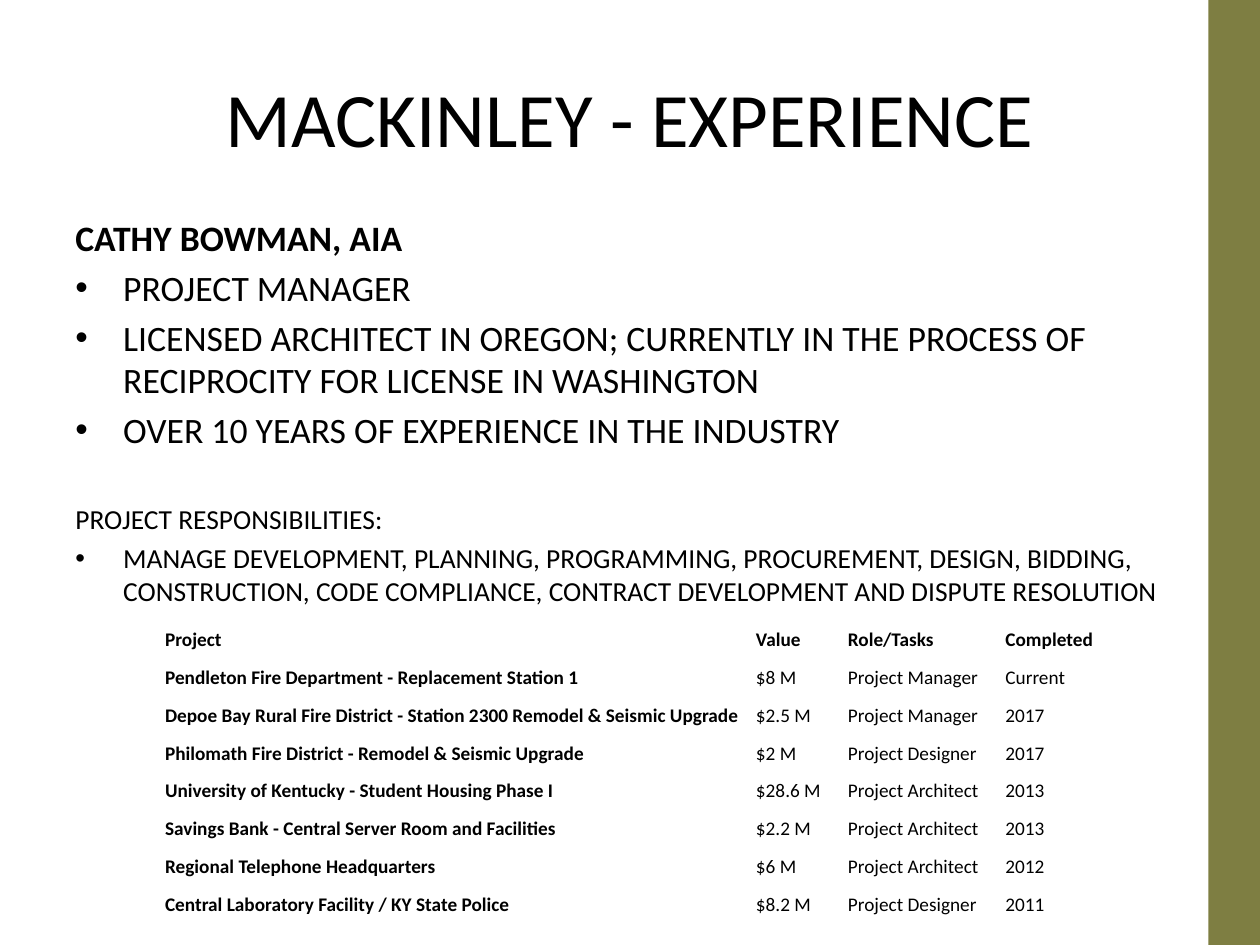
"""Build the project manager experience slide with its project table."""
from dataclasses import dataclass

from lxml.etree import SubElement
from pptx import Presentation
from pptx.dml.color import RGBColor
from pptx.enum.shapes import MSO_SHAPE
from pptx.enum.text import MSO_ANCHOR, PP_ALIGN
from pptx.oxml.ns import qn
from pptx.util import Inches, Pt


@dataclass(frozen=True)
class Theme:
    font: str = "Calibri"
    ink: RGBColor = RGBColor(0, 0, 0)
    paper: RGBColor = RGBColor(255, 255, 255)
    olive: RGBColor = RGBColor(0x7E, 0x7E, 0x42)
    title: float = 44
    profile: float = 20.4
    duties: float = 15.7
    table: float = 11


THEME = Theme()
WIDTH, HEIGHT = 10, 7.5
MARGIN = WIDTH * 0.05
BAR_LEFT = 9.59
INDENT = 0.38
LEADING_SHARE = 0.2
SECTION_GAP = 29.4
TITLE = "MACKINLEY - EXPERIENCE"
PROFILE = [
    ("CATHY BOWMAN, AIA", dict(size=THEME.profile, bold=True, before=0)),
    ("PROJECT MANAGER", dict(size=THEME.profile, bullet=True)),
    ("LICENSED ARCHITECT IN OREGON; CURRENTLY IN THE PROCESS OF "
     "RECIPROCITY FOR LICENSE IN WASHINGTON", dict(size=THEME.profile, bullet=True)),
    ("OVER 10 YEARS OF EXPERIENCE IN THE INDUSTRY", dict(size=THEME.profile, bullet=True)),
    ("PROJECT RESPONSIBILITIES:", dict(size=THEME.duties, before=SECTION_GAP)),
    ("MANAGE DEVELOPMENT, PLANNING, PROGRAMMING, PROCUREMENT, DESIGN, BIDDING, "
     "CONSTRUCTION, CODE COMPLIANCE, CONTRACT DEVELOPMENT AND DISPUTE RESOLUTION",
     dict(size=THEME.duties, bullet=True)),
]
PROJECTS = [
    ("Project", "Value", "Role/Tasks", "Completed"),
    ("Pendleton Fire Department - Replacement Station 1", "$8 M", "Project Manager", "Current"),
    ("Depoe Bay Rural Fire District - Station 2300 Remodel & Seismic Upgrade",
     "$2.5 M", "Project Manager", "2017"),
    ("Philomath Fire District - Remodel & Seismic Upgrade", "$2 M", "Project Designer", "2017"),
    ("University of Kentucky - Student Housing Phase I", "$28.6 M", "Project Architect", "2013"),
    ("Savings Bank - Central Server Room and Facilities", "$2.2 M", "Project Architect", "2013"),
    ("Regional Telephone Headquarters", "$6 M", "Project Architect", "2012"),
    ("Central Laboratory Facility / KY State Police", "$8.2 M", "Project Designer", "2011"),
]
COLUMNS = (4.69, 0.73, 1.25, 0.83)
ROW = 0.3
TABLE_TOP = 4.93


def write(paragraph, text, size, bold=False, bullet=False, before=None, align=PP_ALIGN.LEFT):
    if bullet:
        properties = paragraph._p.get_or_add_pPr()
        properties.set("marL", str(Inches(INDENT)))
        properties.set("indent", str(-Inches(INDENT)))
        SubElement(properties, qn("a:buFont"), typeface="Arial")
        SubElement(properties, qn("a:buChar"), char="•")
    paragraph.alignment = align
    paragraph.space_before = Pt(size * LEADING_SHARE if before is None else before)
    run = paragraph.add_run()
    run.text = text
    run.font.name, run.font.size, run.font.bold = THEME.font, Pt(size), bold
    run.font.color.rgb = THEME.ink


def add_frame(slide, top, height, anchor):
    box = slide.shapes.add_textbox(
        Inches(MARGIN), Inches(top), Inches(WIDTH - 2 * MARGIN), Inches(height))
    box.text_frame.word_wrap = True
    box.text_frame.vertical_anchor = anchor
    return box.text_frame


def add_side_bar(slide):
    bar = slide.shapes.add_shape(
        MSO_SHAPE.RECTANGLE, Inches(BAR_LEFT), 0, Inches(WIDTH - BAR_LEFT), Inches(HEIGHT))
    bar.shadow.inherit = False
    bar.fill.solid()
    bar.fill.fore_color.rgb = THEME.olive
    bar.line.fill.background()


def add_profile(slide):
    frame = add_frame(slide, 1.66, 3.45, MSO_ANCHOR.TOP)
    for index, (text, style) in enumerate(PROFILE):
        paragraph = frame.add_paragraph() if index else frame.paragraphs[0]
        write(paragraph, text, **style)


def add_projects(slide):
    width = sum(COLUMNS)
    table = slide.shapes.add_table(
        len(PROJECTS), len(COLUMNS), Inches((WIDTH - width) / 2), Inches(TABLE_TOP),
        Inches(width), Inches(ROW * len(PROJECTS))).table
    for column, share in zip(table.columns, COLUMNS):
        column.width = Inches(share)
    for row, project in enumerate(PROJECTS):
        for column, text in enumerate(project):
            cell = table.cell(row, column)
            cell.fill.solid()
            cell.fill.fore_color.rgb = THEME.paper
            cell.margin_left = cell.margin_right = Inches(0.06)
            cell.margin_top = cell.margin_bottom = Inches(0.05)
            cell.vertical_anchor = MSO_ANCHOR.MIDDLE
            write(cell.text_frame.paragraphs[0], text, size=THEME.table,
                  bold=row == 0 or column == 0, before=0)


def main():
    deck = Presentation()
    deck.slide_width, deck.slide_height = Inches(WIDTH), Inches(HEIGHT)
    slide = deck.slides.add_slide(deck.slide_layouts[6])
    add_side_bar(slide)
    title = add_frame(slide, 0.3, 1.25, MSO_ANCHOR.MIDDLE)
    write(title.paragraphs[0], TITLE, size=THEME.title, before=0, align=PP_ALIGN.CENTER)
    add_profile(slide)
    add_projects(slide)
    deck.save("out.pptx")


if __name__ == "__main__":
    main()
